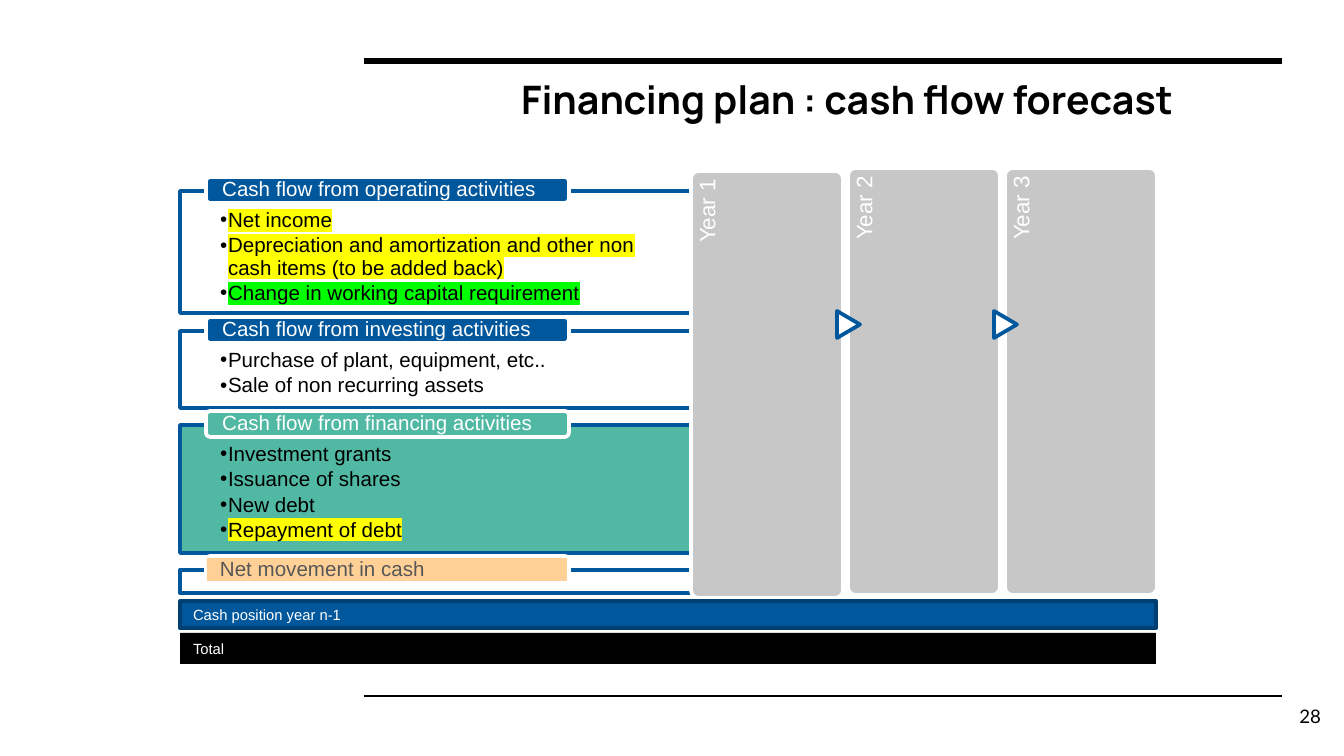
from lxml.etree import SubElement
from pptx import Presentation
from pptx.dml.color import RGBColor
from pptx.enum.shapes import MSO_CONNECTOR as Connector, MSO_SHAPE as Shape
from pptx.enum.text import MSO_ANCHOR as Anchor, MSO_AUTO_SIZE as AutoSize, PP_ALIGN as Align
from pptx.oxml.ns import qn
from pptx.util import Pt

SCALE = 914400 / 134.4
BLUE, NAVY, GREEN, GREY = "00579B", "003F71", "51B9A3", "C7C7C7"
PEACH, BLACK, WHITE = "FFD197", "000000", "FFFFFF"
YELLOW, LIME = "FFFF00", "00FF00"

SECTIONS = [
    ("Cash flow from operating activities", 191, 122, WHITE, BLUE, [
        ("Net income", YELLOW),
        ("Depreciation and amortization and other non cash items (to be added back)", YELLOW),
        ("Change in working capital requirement", LIME)]),
    ("Cash flow from investing activities", 331, 77, WHITE, BLUE, [
        ("Purchase of plant, equipment, etc..", None),
        ("Sale of non recurring assets", None)]),
    ("Cash flow from financing activities", 425, 128, GREEN, GREEN, [
        ("Investment grants", None),
        ("Issuance of shares", None),
        ("New debt", None),
        ("Repayment of debt", YELLOW)]),
]


def px(length):
    return round(length * SCALE)


def rgb(value):
    return RGBColor.from_string(value)


class CashFlowSlide:
    font = "Arial"
    outline = 2
    translucency = "89000"

    def __init__(self, deck, layout):
        self.slide = deck.slides.add_slide(deck.slide_layouts[layout])
        self.shapes = self.slide.shapes

    def place(self, shape, left, top, width, height):
        shape.left, shape.top = px(left), px(top)
        shape.width, shape.height = px(width), px(height)

    def paint(self, shape, fill, line=None):
        shape.fill.solid()
        shape.fill.fore_color.rgb = rgb(fill)
        if line:
            shape.line.color.rgb = rgb(line)
            shape.line.width = Pt(self.outline)
        else:
            shape.line.fill.background()

    def fade(self, shape):
        color = shape._element.spPr.find(qn("a:solidFill"))[0]
        SubElement(color, qn("a:alpha"), val=self.translucency)

    def frame(self, shape, insets, anchor=Anchor.TOP):
        frame = shape.text_frame
        frame.word_wrap = True
        frame.auto_size = AutoSize.NONE
        frame.vertical_anchor = anchor
        (frame.margin_left, frame.margin_top,
         frame.margin_right, frame.margin_bottom) = map(px, insets)
        return frame

    def style(self, paragraph, size, color, font=None, bold=False, align=Align.LEFT, spacing=1.0):
        paragraph.alignment = align
        paragraph.line_spacing = spacing
        for run in paragraph.runs:
            run.font.name = font or self.font
            run.font.size = Pt(size)
            run.font.bold = bold
            run.font.color.rgb = rgb(color)

    def caption(self, shape, wording, size, color, insets, anchor=Anchor.TOP, **style):
        frame = self.frame(shape, insets, anchor)
        frame.text = wording
        self.style(frame.paragraphs[0], size, color, **style)

    def title(self, wording, *box):
        heading = self.shapes.title
        self.place(heading, *box)
        self.caption(heading, wording, 21, BLACK, (13, 13, 13, 13), font="Manrope", bold=True)

    def box(self, kind, bounds, fill, line=None, corner=None, turn=0):
        shape = self.shapes.add_shape(kind, *map(px, bounds))
        shape.shadow.inherit = False
        shape.rotation = turn
        if corner:
            shape.adjustments[0] = corner
        self.paint(shape, fill, line)
        return shape

    def label(self, wording, bounds, size, color, insets, turn=0, **style):
        label = self.shapes.add_textbox(*map(px, bounds))
        label.rotation = turn
        self.caption(label, wording, size, color, insets, **style)

    def items(self, body, entries, bounds, fill):
        self.place(body, *bounds)
        self.paint(body, fill, BLUE)
        if fill == WHITE:
            self.fade(body)
        frame = self.frame(body, (40, 19, 40, 12))
        frame.text = "\n".join(wording for wording, _ in entries)
        for index, (paragraph, (_, marker)) in enumerate(zip(frame.paragraphs, entries)):
            paragraph.level = 1
            paragraph.space_before = Pt(1.6 if index else 0)
            self.style(paragraph, 11, BLACK, spacing=0.9)
            self.bullet(paragraph)
            if marker:
                self.highlight(paragraph.runs[0], marker)

    def bullet(self, paragraph):
        properties = paragraph._p.get_or_add_pPr()
        properties.set("marL", str(px(8)))
        properties.set("indent", str(-px(8)))
        SubElement(SubElement(properties, qn("a:buClr")), qn("a:srgbClr"), val=BLACK)
        SubElement(properties, qn("a:buFont"), typeface=self.font)
        SubElement(properties, qn("a:buChar"), char="•")

    def highlight(self, run, color):
        properties = run._r.get_or_add_rPr()
        marker = SubElement(properties, qn("a:highlight"))
        SubElement(marker, qn("a:srgbClr"), val=color)
        properties.find(qn("a:solidFill")).addnext(marker)

    def header(self, bounds, fill, wording=""):
        tab = self.box(Shape.ROUNDED_RECTANGLE, bounds, fill, WHITE, corner=0.167)
        if wording:
            self.caption(tab, wording, 11, WHITE, (15, 0, 15, 0), Anchor.MIDDLE, spacing=0.9)

    def rule(self, left, right, y, weight):
        rule = self.shapes.add_connector(Connector.STRAIGHT, px(left), px(y), px(right), px(y))
        rule.line.color.rgb = rgb(BLACK)
        rule.line.width = Pt(weight)
        SubElement(rule._element.spPr, qn("a:effectLst"))


def main():
    deck = Presentation()
    deck.slide_width, deck.slide_height = px(1344), px(756)
    page = CashFlowSlide(deck, 4)
    page.title("Financing plan : cash flow forecast", 508, 62, 831, 94)

    bodies = [holder for holder in page.slide.placeholders if holder.placeholder_format.idx]
    for spare in bodies[len(SECTIONS):]:
        spare._element.getparent().remove(spare._element)
    for body, (heading, top, height, fill, tab_fill, entries) in zip(bodies, SECTIONS):
        page.items(body, entries, (180, top, 519, height), fill)
        page.header((206, top - 14, 363, 26), tab_fill, heading)

    net_frame = page.box(Shape.RECTANGLE, (180, 570, 519, 23), WHITE, BLUE)
    page.fade(net_frame)
    page.header((206, 556, 363, 26), BLACK)
    net_movement = page.box(Shape.RECTANGLE, (207, 558, 360, 23), PEACH)
    page.caption(net_movement, "Net movement in cash", 11, "575757", (13, 0, 13, 0),
                 Anchor.MIDDLE, spacing=0.9)

    for index, top in enumerate((171, 168, 168)):
        left = 691 + 157 * index
        page.box(Shape.ROUNDED_RECTANGLE, (left, top, 152, 427), GREY, WHITE, corner=0.05)
        page.label(f"Year {index + 1}", (left - 160, top + 160, 351, 31), 12, WHITE,
                   (0, 5, 8, 0), turn=270, align=Align.RIGHT, spacing=0.9)
        if index:
            page.box(Shape.FLOWCHART_EXTRACT, (left - 13, 313, 27, 23), WHITE, BLUE, turn=90)

    opening = page.box(Shape.RECTANGLE, (180, 601, 976, 27), "01579B", NAVY)
    page.caption(opening, "Cash position year n-1", 7.9, WHITE, (13, 7, 13, 7), Anchor.MIDDLE)
    total = page.box(Shape.RECTANGLE, (180, 633, 976, 31), BLACK)
    page.caption(total, "Total", 7.9, WHITE, (13, 7, 13, 7))

    page.rule(364, 1282, 61, 3)
    page.rule(364, 1282, 696, 1.5)
    page.label("28", (1278, 700, 54, 31), 10, BLACK, (11, 5, 11, 5),
               font="Lato", align=Align.RIGHT)
    deck.save("out.pptx")


if __name__ == "__main__":
    main()
